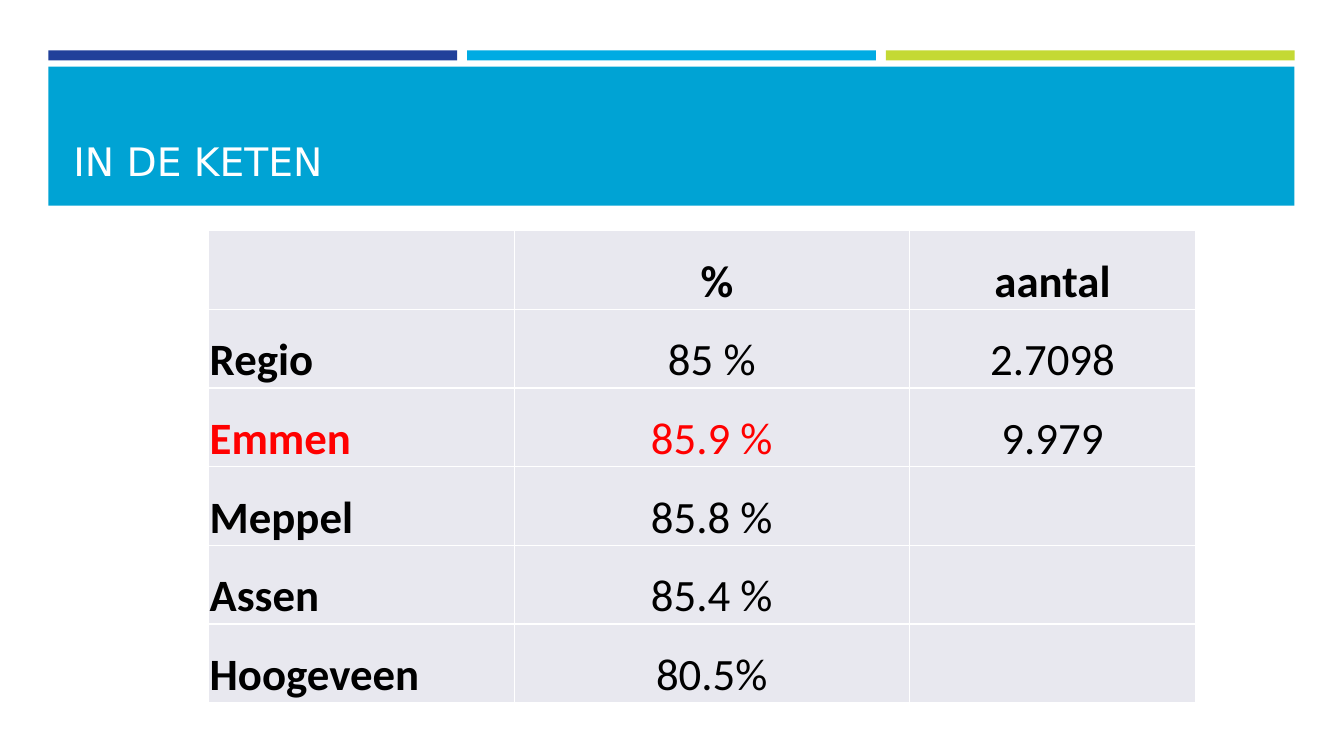
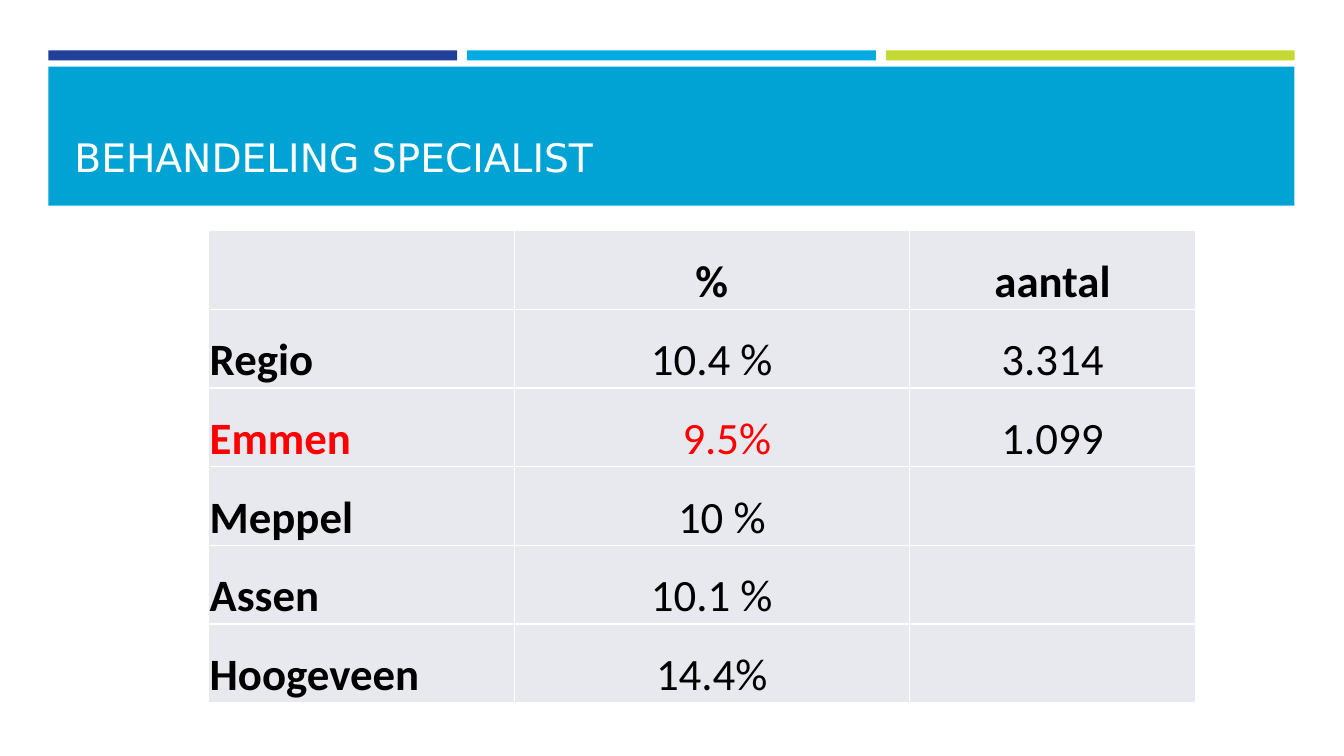
import dataclasses

import lxml.etree
import pptx
import pptx.dml.color
import pptx.enum.shapes
import pptx.enum.text
import pptx.oxml.ns
import pptx.util

Inches = pptx.util.Inches
Align = pptx.enum.text.PP_ALIGN
Anchor = pptx.enum.text.MSO_ANCHOR


@dataclasses.dataclass(frozen=True)
class Theme:
    stripes: tuple = ("21409A", "00ABE3", "C4D934")
    band: str = "00A3D4"
    white: str = "FFFFFF"
    text: str = "000000"
    highlight: str = "FF0000"
    cell: str = "E8E8EF"
    title_font: str = "DejaVu Sans"
    table_font: str = "Calibri"
    title_size: int = 28
    table_size: int = 32
    border_width: int = 1


@dataclasses.dataclass(frozen=True)
class Box:
    left: float
    top: float
    width: float
    height: float

    def lengths(self):
        return [Inches(side) for side in dataclasses.astuple(self)]


THEME = Theme()
HEADER_BOX = Box(0.48, 0.5, 12.36, 1.54)
TABLE_BOX = Box(2.07, 2.29, 9.79, 4.68)
COLUMN_WIDTHS = (3.03, 3.92, 2.84)
HIGHLIGHT_ROW = "Emmen"

# Each slide: title, title offset in the header, rows, and the left indents
# of single cells by (row, column)
SLIDES = (
    ("IN DE KETEN", (0.15, 0.3), (
        ("", "%", "aantal"),
        ("Regio", "85 %", "2.7098"),
        ("Emmen", "85.9 %", "9.979"),
        ("Meppel", "85.8 %", ""),
        ("Assen", "85.4 %", ""),
        ("Hoogeveen", "80.5%", ""),
    ), {(0, 1): 0.1}),
    ("BEHANDELING SPECIALIST", (0.16, 0.26), (
        ("", "%", "aantal"),
        ("Regio", "10.4 %", "3.314"),
        ("Emmen", "9.5%", "1.099"),
        ("Meppel", "10 %", ""),
        ("Assen", "10.1 %", ""),
        ("Hoogeveen", "14.4%", ""),
    ), {(2, 1): 0.3, (3, 1): 0.2}),
)


def rgb(colour):
    return pptx.dml.color.RGBColor.from_string(colour)


def add_span(para, text, font, size, colour, bold=False):
    span = para.add_run()
    span.text = text
    span.font.name = font
    span.font.size = pptx.util.Pt(size)
    span.font.color.rgb = rgb(colour)
    span.font.bold = bold


def add_bar(page, box, colour):
    bar = page.shapes.add_shape(
        pptx.enum.shapes.MSO_SHAPE.RECTANGLE, *box.lengths())
    bar.shadow.inherit = False
    bar.fill.solid()
    bar.fill.fore_color.rgb = rgb(colour)
    bar.line.fill.background()


def add_header(page, box, title, title_offset):
    # Three stripes with equal gaps
    gap, stripe_height, band_offset = 0.1, 0.1, 0.16
    count = len(THEME.stripes)
    width = (box.width - gap * (count - 1)) / count
    for index, colour in enumerate(THEME.stripes):
        left = box.left + index * (width + gap)
        add_bar(page, Box(left, box.top, width, stripe_height), colour)

    # Title band
    add_bar(page, Box(box.left, box.top + band_offset, box.width,
                      box.height - band_offset), THEME.band)

    # Title
    across, down = title_offset
    title_box = Box(box.left + across, box.top + down, 12.06, 1.08)
    frame = page.shapes.add_textbox(*title_box.lengths()).text_frame
    frame.word_wrap = True
    frame.vertical_anchor = Anchor.BOTTOM
    add_span(frame.paragraphs[0], title, THEME.title_font,
             THEME.title_size, THEME.white)


def add_borders(cell):
    properties = cell._tc.get_or_add_tcPr()
    qn = pptx.oxml.ns.qn
    for side in ("a:lnL", "a:lnR", "a:lnT", "a:lnB"):
        line = lxml.etree.SubElement(
            properties, qn(side), w=str(pptx.util.Pt(THEME.border_width)))
        fill = lxml.etree.SubElement(line, qn("a:solidFill"))
        lxml.etree.SubElement(fill, qn("a:srgbClr"), val=THEME.white)


def style_cell(cell, indent):
    add_borders(cell)
    cell.fill.solid()
    cell.fill.fore_color.rgb = rgb(THEME.cell)
    cell.vertical_anchor = Anchor.BOTTOM
    cell.margin_left = Inches(0.01 + indent)
    cell.margin_right = cell.margin_top = Inches(0.01)
    cell.margin_bottom = Inches(0)


def add_figures(page, box, rows, indents):
    table = page.shapes.add_table(
        len(rows), len(COLUMN_WIDTHS), *box.lengths()).table
    table.first_row = table.horz_banding = False
    for column, width in zip(table.columns, COLUMN_WIDTHS):
        column.width = Inches(width)
    for row_index, texts in enumerate(rows):
        table.rows[row_index].height = Inches(box.height / len(rows))
        for column_index, text in enumerate(texts):
            cell = table.cell(row_index, column_index)
            style_cell(cell, indents.get((row_index, column_index), 0))
            if not text:
                continue
            para = cell.text_frame.paragraphs[0]
            para.alignment = Align.CENTER if column_index else Align.LEFT
            # Name and percentage of the highlighted row stand out
            marked = texts[0] == HIGHLIGHT_ROW and column_index < 2
            add_span(para, text, THEME.table_font, THEME.table_size,
                     THEME.highlight if marked else THEME.text,
                     bold=row_index == 0 or column_index == 0)


def add_table_slide(deck, title, title_offset, rows, indents):
    page = deck.slides.add_slide(deck.slide_layouts[6])
    add_header(page, HEADER_BOX, title, title_offset)
    add_figures(page, TABLE_BOX, rows, indents)


def main():
    deck = pptx.Presentation()
    deck.slide_width = Inches(13.33)
    deck.slide_height = Inches(7.5)
    for content in SLIDES:
        add_table_slide(deck, *content)
    deck.save("out.pptx")


if __name__ == "__main__":
    main()
